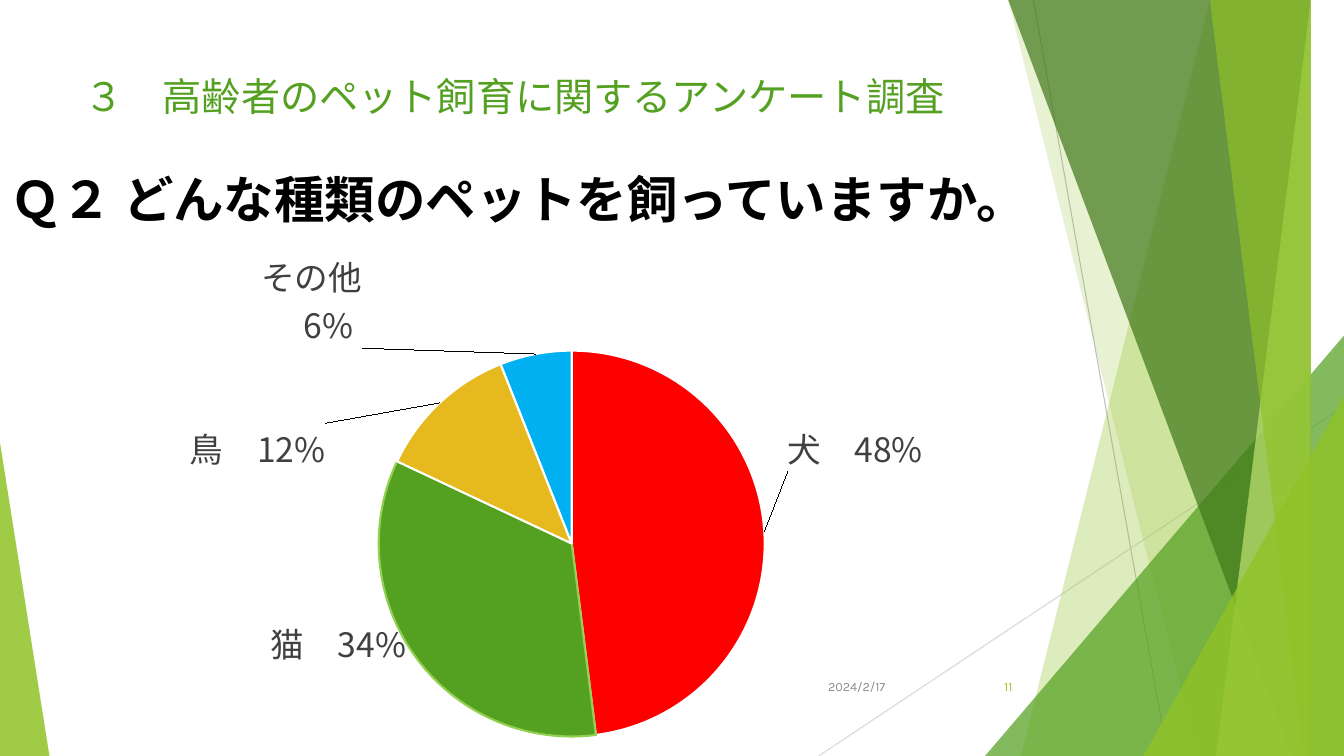
import pptx
import pptx.chart.data
import pptx.dml.color
import pptx.enum.chart
import pptx.enum.shapes
import pptx.enum.text
import pptx.util
from lxml import etree
from pptx.oxml.ns import qn
from pptx.util import Inches

WIDTH, HEIGHT = 13.33, 7.5
LATIN_FONT, LABEL_FONT = "Karla", "Noto Sans CJK JP"

# Label text, share, slice colour, outline, label shift as a fraction of the chart
PETS = [
    ("犬\u300048%", 0.48, "FF0000", "FFFFFF", (0.018, -0.16)),
    ("猫\u300034%", 0.34, "54A021", "92D050", (-0.005, -0.08)),
    ("鳥\u300012%", 0.12, "E6B91E", "FFFFFF", (-0.115, 0.14)),
    ("その他\n\u30006%", 0.06, "00B0F0", "FFFFFF", (-0.18, 0)),
]


def color(value):
    return pptx.dml.color.RGBColor.from_string(value)


def fill_facet(shape, value, opacity):
    shape.shadow.inherit = False
    shape.fill.solid()
    shape.fill.fore_color.rgb = color(value)
    shape.line.fill.background()
    tint = shape.fill._xPr.find(".//" + qn("a:srgbClr"))
    etree.SubElement(tint, qn("a:alpha"), val=str(opacity * 1000))


def add_line(slide, start, end, value):
    line = slide.shapes.add_connector(
        pptx.enum.shapes.MSO_CONNECTOR.STRAIGHT, *map(Inches, start + end))
    line.line.color.rgb = color(value)
    line.line.width = pptx.util.Pt(0.75)
    etree.SubElement(line._element.spPr, qn("a:effectLst"))


def add_band(slide, top_left, bottom_left, value, opacity):
    """A facet that runs from a slanted left side to the slide's right edge."""
    builder = slide.shapes.build_freeform(top_left, 0, scale=Inches(1))
    builder.add_line_segments(
        [(WIDTH, 0), (WIDTH, HEIGHT), (bottom_left, HEIGHT)], close=True)
    fill_facet(builder.convert_to_shape(), value, opacity)


def add_corner(slide, left, top, width, apex, value, opacity):
    """A triangle that stands on the slide's bottom edge."""
    triangle = slide.shapes.add_shape(
        pptx.enum.shapes.MSO_SHAPE.ISOSCELES_TRIANGLE,
        Inches(left), Inches(top), Inches(width), Inches(HEIGHT - top))
    triangle.adjustments[0] = apex
    fill_facet(triangle, value, opacity)


def add_background(slide):
    add_line(slide, (10.25, 0), (11.58, HEIGHT), "BFBFBF")
    add_line(slide, (WIDTH, 4.03), (8.12, HEIGHT), "D9D9D9")
    add_band(slide, 12.28, 10.04, "90C226", 30)
    add_band(slide, 10.5, 11.83, "90C226", 20)
    add_corner(slide, 9.77, 3.33, 3.56, 1, "54A021", 72)
    add_band(slide, 10.21, 12.91, "3F7819", 70)
    add_band(slide, 13.03, 11.92, "C0E474", 70)
    add_band(slide, 11.96, 13.18, "90C226", 65)
    add_corner(slide, 11.34, 3.93, 1.99, 1, "90C226", 80)
    add_corner(slide, 0, 4.39, 0.49, 0, "90C226", 85)


def add_text(slide, box, text, size, value, bold=False, footer=False):
    frame = slide.shapes.add_textbox(*map(Inches, box)).text_frame
    frame.word_wrap = True
    paragraph = frame.paragraphs[0]
    paragraph.text = text
    paragraph.font.name = LATIN_FONT
    paragraph.font.size = pptx.util.Pt(size)
    paragraph.font.bold = bold
    paragraph.font.color.rgb = color(value)
    if footer:
        frame.vertical_anchor = pptx.enum.text.MSO_ANCHOR.MIDDLE
        paragraph.alignment = pptx.enum.text.PP_ALIGN.RIGHT


def set_layout(parent, index, **values):
    """Put a manual layout at the given place among the parent's children."""
    for old in parent.findall(qn("c:layout")):
        parent.remove(old)
    layout = etree.Element(qn("c:layout"))
    manual = etree.SubElement(layout, qn("c:manualLayout"))
    for name, value in values.items():
        etree.SubElement(manual, qn("c:" + name), val=str(value))
    parent.insert(index, layout)


def style_label_font(font):
    font.name = LABEL_FONT
    font.size = pptx.util.Pt(24)
    font.bold = False
    font.color.rgb = color("404040")


def add_pet_chart(slide, box):
    data = pptx.chart.data.CategoryChartData(number_format="0%")
    data.categories = ["1", "2", "3", "4"]
    data.add_series("Series 1", [pet[1] for pet in PETS])
    chart = slide.shapes.add_chart(
        pptx.enum.chart.XL_CHART_TYPE.PIE, *map(Inches, box), data).chart
    chart.has_legend = False
    chart.has_title = False
    chart.font.name = LATIN_FONT
    chart.font.size = pptx.util.Pt(10)
    chart.font.color.rgb = color("000000")
    plot_area = chart._chartSpace.find(".//" + qn("c:plotArea"))
    set_layout(plot_area, 0, layoutTarget="inner", xMode="edge", yMode="edge",
               x=0.287, y=0.221, w=0.403, h=0.743)

    series = chart.plots[0].series[0]
    labels = series.data_labels
    labels.show_value = True
    labels.number_format = "0%"
    labels.number_format_is_linked = False
    labels.position = pptx.enum.chart.XL_LABEL_POSITION.OUTSIDE_END
    style_label_font(labels.font)

    # Slices and their labels
    for index, (text, _, fill, outline, (x, y)) in enumerate(PETS):
        point = series.points[index]
        point.format.fill.solid()
        point.format.fill.fore_color.rgb = color(fill)
        point.format.line.color.rgb = color(outline)
        point.format.line.width = pptx.util.Pt(1.5)
        label = point.data_label
        label.text_frame.text = text
        for paragraph in label.text_frame.paragraphs:
            for run in paragraph.runs:
                style_label_font(run.font)
        label.position = pptx.enum.chart.XL_LABEL_POSITION.OUTSIDE_END
        set_layout(labels._element.findall(qn("c:dLbl"))[index], 1, x=x, y=y)


def build_survey_slide(presentation):
    slide = presentation.slides.add_slide(presentation.slide_layouts[6])
    add_background(slide)
    add_text(slide, (0.74, 0.67, 9.4, 1.44),
             "３\u3000高齢者のペット飼育に関するアンケート調査", 28, "54A021")
    add_text(slide, (0.01, 1.62, 11.54, 0.71),
             "Ｑ２ どんな種類のペットを飼っていますか。", 36, "000000", bold=True)
    add_pet_chart(slide, (1.03, 2.33, 9.5, 5.17))
    add_text(slide, (7.88, 6.61, 1, 0.4), "2024/2/17", 9, "8C8C8C", footer=True)
    add_text(slide, (9.39, 6.61, 0.75, 0.4), "11", 9, "90C226", footer=True)


def main():
    presentation = pptx.Presentation()
    presentation.slide_width = Inches(WIDTH)
    presentation.slide_height = Inches(HEIGHT)
    build_survey_slide(presentation)
    presentation.save("out.pptx")


if __name__ == "__main__":
    main()
